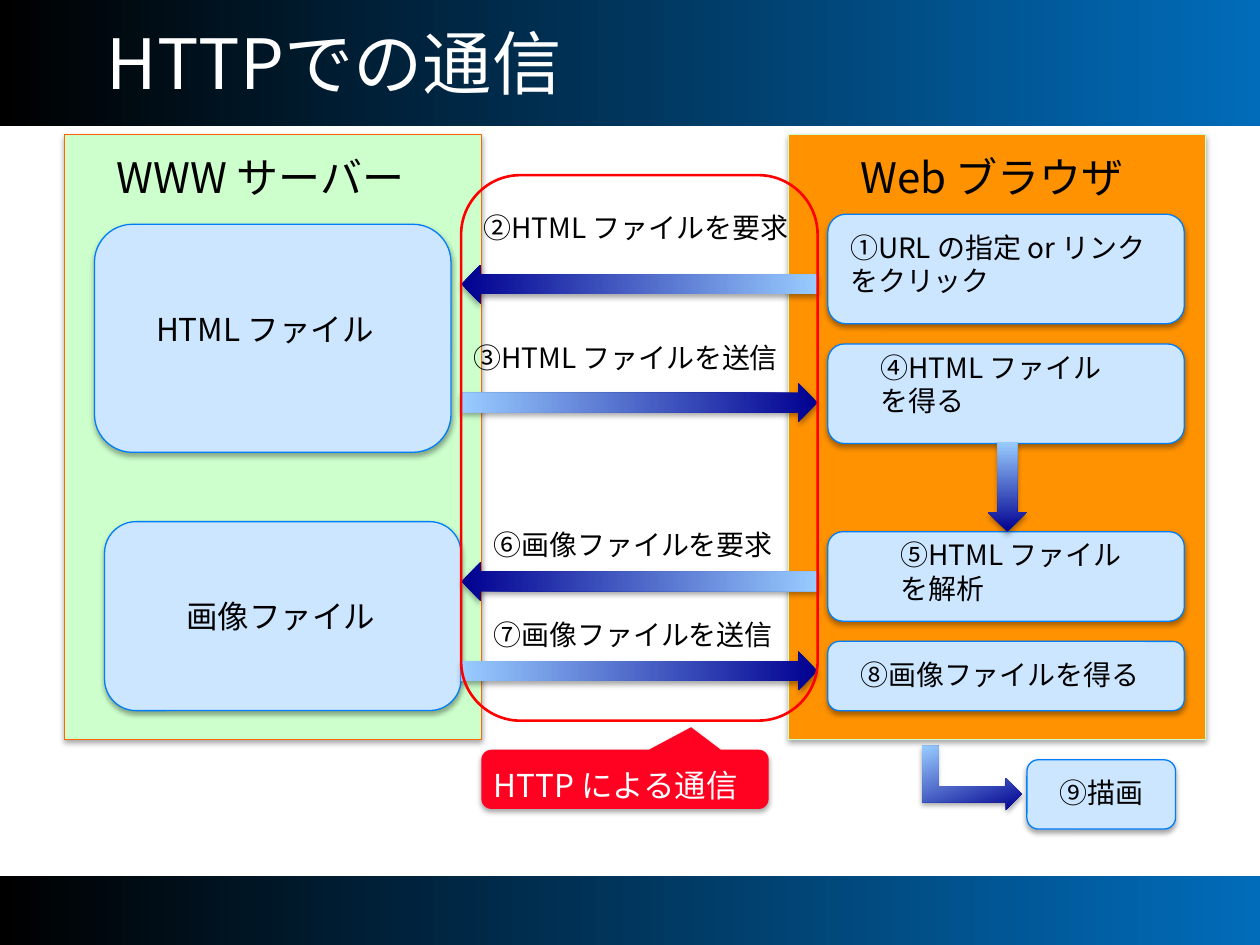
"""Build a slide showing how a web server and a browser communicate over HTTP."""
from lxml import etree
from pptx import Presentation
from pptx.dml.color import RGBColor
from pptx.enum.shapes import MSO_SHAPE
from pptx.enum.text import MSO_ANCHOR, MSO_AUTO_SIZE
from pptx.oxml import parse_xml
from pptx.oxml.ns import qn
from pptx.util import Inches, Pt

RECTANGLE = MSO_SHAPE.RECTANGLE
ROUNDED = MSO_SHAPE.ROUNDED_RECTANGLE
LEFT_ARROW = MSO_SHAPE.LEFT_ARROW
BENT_ARROW = MSO_SHAPE.BENT_UP_ARROW
CALLOUT = MSO_SHAPE.ROUNDED_RECTANGULAR_CALLOUT
MIDDLE = MSO_ANCHOR.MIDDLE
TOP = MSO_ANCHOR.TOP
GROW = MSO_AUTO_SIZE.SHAPE_TO_FIT_TEXT
FIXED = MSO_AUTO_SIZE.NONE

FONT = "Noto Sans CJK JP"
BAND_COLORS = ("000000", "016CBA")
ARROW_COLORS = ("000090", "99CCFF")
SHADOW = (
    '<a:effectLst xmlns:a="http://schemas.openxmlformats.org/drawingml/2006/main">'
    '<a:outerShdw blurRad="39370" dist="22860" dir="5400000" rotWithShape="0">'
    '<a:srgbClr val="000000"><a:alpha val="35000"/></a:srgbClr>'
    "</a:outerShdw></a:effectLst>"
)

presentation = Presentation()
presentation.slide_width = Inches(10)
presentation.slide_height = Inches(7.5)
slide = presentation.slides.add_slide(presentation.slide_layouts[6])


def add_shape(kind, box, fill=None, line=None, width=0.75, angle=0, rotation=0, shadow=True):
    shape = slide.shapes.add_shape(kind, *map(Inches, box))
    shape.rotation = rotation
    shape.shadow.inherit = False
    if fill is None:
        shape.fill.background()
    elif isinstance(fill, tuple):
        shape.fill.gradient()
        shape.fill.gradient_angle = angle
        for stop, color in zip(shape.fill.gradient_stops, fill):
            stop.color.rgb = RGBColor.from_string(color)
    else:
        shape.fill.solid()
        shape.fill.fore_color.rgb = RGBColor.from_string(fill)
    if line is None:
        shape.line.fill.background()
    else:
        shape.line.color.rgb = RGBColor.from_string(line)
        shape.line.width = Pt(width)
    if shadow:
        properties = shape.fill._xPr
        properties.replace(properties.find(qn("a:effectLst")), parse_xml(SHADOW))
    return shape


def add_text(text, box, size, color="000000", anchor=TOP, auto_size=GROW):
    frame = slide.shapes.add_textbox(*map(Inches, box)).text_frame
    frame_format = {"word_wrap": True, "auto_size": auto_size, "vertical_anchor": anchor}
    for name, value in frame_format.items():
        setattr(frame, name, value)
    run = frame.paragraphs[0].add_run()
    run.text = text
    for name, value in {"name": FONT, "size": Pt(size)}.items():
        setattr(run.font, name, value)
    run.font.color.rgb = RGBColor.from_string(color)
    etree.SubElement(run.font._element, qn("a:ea"), typeface=FONT)


for band in ((0, 0, 10.01, 1), (0, 6.95, 10, 0.55)):
    add_shape(RECTANGLE, band, BAND_COLORS, shadow=False)
add_text("HTTPでの通信", (0.75, 0.11, 8.5, 0.76), 39.6, "FFFFFF", MIDDLE, FIXED)

for left, fill, line in ((0.51, "CCFFCC", "FF6600"), (6.26, "FF9200", "CCFFCC")):
    add_shape(RECTANGLE, (left, 1.07, 3.31, 4.8), fill, line)

cards = [
    (0.75, 1.78, 2.83, 1.81),
    (0.83, 4.14, 2.83, 1.5),
    (6.57, 1.7, 2.83, 0.87),
    (6.57, 2.73, 2.83, 0.79),
    (6.57, 4.22, 2.83, 0.71),
    (6.57, 5.09, 2.83, 0.55),
    (8.15, 6.03, 1.18, 0.55),
]
for card in cards:
    add_shape(ROUNDED, card, "CCE6FF", "007DF9")

labels = [
    ("WWW サーバー", (0.83, 1.15, 2.76, 0.5), 24),
    ("Web ブラウザ", (6.73, 1.15, 2.65, 0.5), 24),
    ("HTML ファイル", (1.14, 2.41, 2.13, 0.4), 18),
    ("画像ファイル", (1.38, 4.69, 1.73, 0.4), 18),
    ("①URL の指定 or リンクをクリック", (6.65, 1.78, 2.76, 0.64), 16),
    ("②HTML ファイルを要求", (3.74, 1.62, 2.76, 0.37), 16),
    ("③HTML ファイルを送信", (3.66, 2.65, 2.83, 0.37), 16),
    ("④HTML ファイルを得る", (6.89, 2.73, 2.13, 0.64), 16),
    ("⑤HTML ファイルを解析", (7.05, 4.22, 2.13, 0.64), 16),
    ("⑥画像ファイルを要求", (3.82, 4.14, 2.6, 0.37), 16),
    ("⑦画像ファイルを送信", (3.82, 4.85, 2.44, 0.37), 16),
    ("⑧画像ファイルを得る", (6.73, 5.17, 2.44, 0.37), 16),
    ("⑨描画", (8.31, 6.11, 0.87, 0.37), 16),
]
for text, box, size in labels:
    add_text(text, box, size)

for top, rotation in ((2.1, 0), (3.04, 180), (4.46, 0), (5.17, 180)):
    add_shape(LEFT_ARROW, (3.66, top, 2.83, 0.31), ARROW_COLORS, rotation=rotation)
add_shape(LEFT_ARROW, (7.64, 3.71, 0.71, 0.31), ARROW_COLORS, rotation=270)
add_shape(BENT_ARROW, (7.46, 5.78, 0.51, 0.79), ARROW_COLORS, angle=202, rotation=90)

add_shape(ROUNDED, (3.66, 1.39, 2.83, 4.33), line="FF0000", width=1.5, shadow=False)
callout = add_shape(CALLOUT, (3.82, 5.95, 2.28, 0.47), "FF0221", rotation=180)
for index, value in enumerate((-0.23, 0.88, 0.17)):
    callout.adjustments[index] = value
add_text("HTTP による通信", (3.82, 6.03, 2.28, 0.71), 18, "FFFFFF")

presentation.save("out.pptx")
